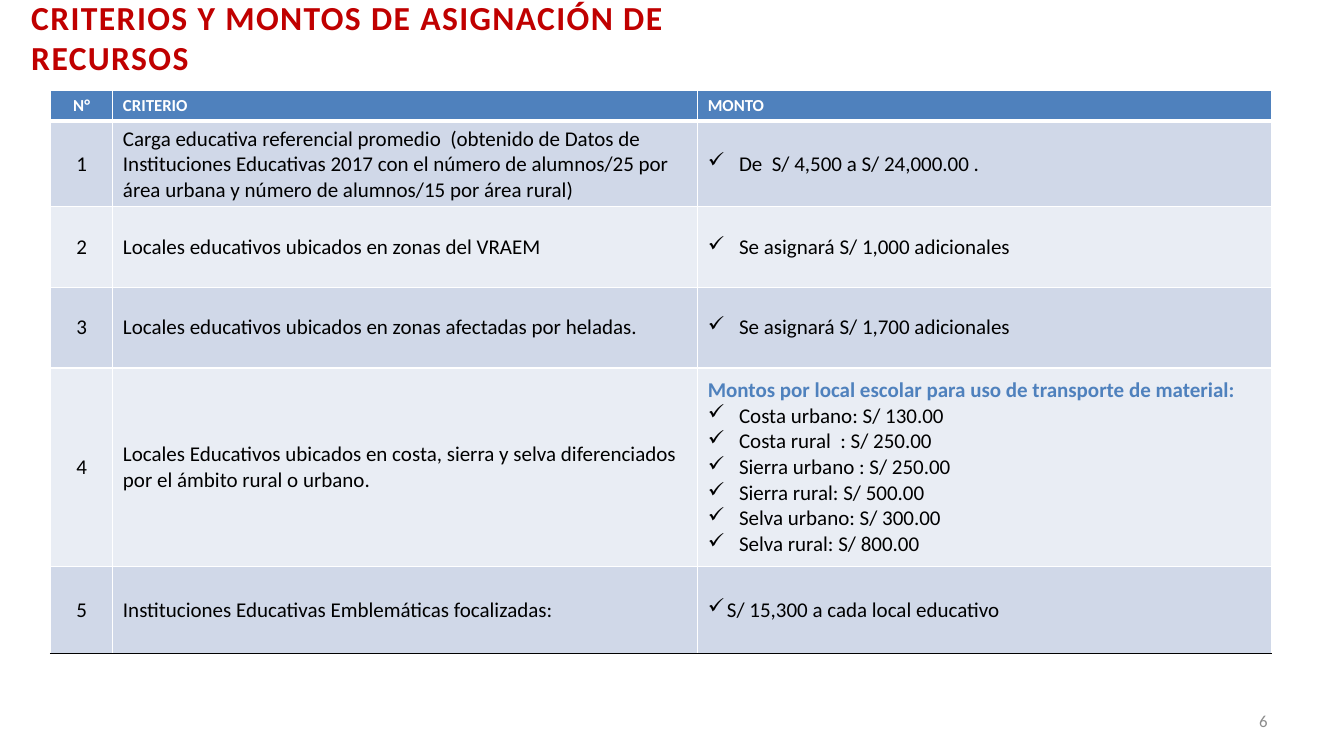
import pptx
import pptx.util
import pptx.dml.color
import pptx.enum.text
import pptx.oxml
import pptx.oxml.ns

Inches, Pt = pptx.util.Inches, pptx.util.Pt
ALIGN = pptx.enum.text.PP_ALIGN
MIDDLE = pptx.enum.text.MSO_ANCHOR.MIDDLE
COLORS = {"title": "C00000", "header": "4F81BD", "odd": "D0D8E8", "even": "E9EDF4",
          "text": "000000", "white": "FFFFFF", "number": "8C8C8C"}
NAMESPACE = pptx.oxml.ns.nsdecls("a")

HEADINGS = ["N°", "CRITERIO", "MONTO"]
CRITERIA = [
    ("Carga educativa referencial promedio  (obtenido de Datos de Instituciones Educativas 2017 "
     "con el número de alumnos/25 por área urbana y número de alumnos/15 por área rural)",
     ["De  S/ 4,500 a S/ 24,000.00 ."]),
    ("Locales educativos ubicados en zonas del VRAEM", ["Se asignará S/ 1,000 adicionales"]),
    ("Locales educativos ubicados en zonas afectadas por heladas.",
     ["Se asignará S/ 1,700 adicionales"]),
    ("Locales Educativos ubicados en costa, sierra y selva diferenciados por el ámbito rural "
     "o urbano.",
     ["Montos por local escolar para uso de transporte de material:",
      "Costa urbano: S/ 130.00", "Costa rural  : S/ 250.00", "Sierra urbano : S/ 250.00",
      "Sierra rural: S/ 500.00", "Selva urbano: S/ 300.00", "Selva rural: S/ 800.00"]),
    ("Instituciones Educativas Emblemáticas focalizadas:", ["S/ 15,300 a cada local educativo"]),
]
COLUMN_WIDTHS = [0.62, 5.8, 5.69]
ROW_HEIGHTS = [0.28, 0.8, 0.8, 0.8, 1.97, 0.86]


def rgb(name):
    return pptx.dml.color.RGBColor.from_string(COLORS[name])


def write(paragraph, text, color, align=ALIGN.LEFT, **font_format):
    run = paragraph.add_run()
    run.text = text
    paragraph.alignment = align
    for attribute, value in {"name": "Calibri", "bold": False, **font_format}.items():
        setattr(run.font, attribute, value)
    run.font.color.rgb = rgb(color)
    return run


def add_check(paragraph, indent):
    properties = paragraph._p.get_or_add_pPr()
    properties.set("marL", str(Inches(indent)))
    properties.set("indent", str(-Inches(indent)))
    properties.append(pptx.oxml.parse_xml(f'<a:buChar {NAMESPACE} char="✓"/>'))


def format_cell(cell, fill, bottom=("white", 1)):
    properties = cell._tc.get_or_add_tcPr()
    borders = {side: ("white", 1) for side in "LRT"} | {"B": bottom}
    for side, (color, width) in borders.items():
        properties.append(pptx.oxml.parse_xml(
            f'<a:ln{side} {NAMESPACE} w="{Pt(width)}"><a:solidFill>'
            f'<a:srgbClr val="{COLORS[color]}"/></a:solidFill></a:ln{side}>'))
    cell.fill.solid()
    cell.fill.fore_color.rgb = rgb(fill)


def fill_amounts(text_frame, amounts, indent):
    for index, amount in enumerate(amounts):
        paragraph = text_frame.add_paragraph() if index else text_frame.paragraphs[0]
        if amount.endswith(":"):
            write(paragraph, amount, "header", size=Pt(15), bold=True)
        else:
            add_check(paragraph, indent)
            write(paragraph, amount, "text", size=Pt(15))


def add_title(slide, left, top, width, height):
    title = slide.shapes.title
    title.left, title.top, title.width, title.height = map(Inches, (left, top, width, height))
    title.text_frame.word_wrap = True
    title.text_frame.auto_size = pptx.enum.text.MSO_AUTO_SIZE.NONE
    title.text_frame.vertical_anchor = MIDDLE
    run = write(title.text_frame.paragraphs[0], "CRITERIOS Y MONTOS DE ASIGNACIÓN DE RECURSOS",
                "title", size=Pt(24), bold=True)
    run.font._element.set("spc", "100")


def add_criteria_table(slide, left, top):
    box = map(Inches, (left, top, sum(COLUMN_WIDTHS), sum(ROW_HEIGHTS)))
    table = slide.shapes.add_table(len(ROW_HEIGHTS), len(COLUMN_WIDTHS), *box).table
    for column, width in zip(table.columns, COLUMN_WIDTHS):
        column.width = Inches(width)
    for row, height in zip(table.rows, ROW_HEIGHTS):
        row.height = Inches(height)

    # Header row
    for index, heading in enumerate(HEADINGS):
        cell = table.cell(0, index)
        format_cell(cell, "header", ("white", 3))
        write(cell.text_frame.paragraphs[0], heading, "white",
              ALIGN.LEFT if index else ALIGN.CENTER, size=Pt(12), bold=True)

    # One row per criterion
    for number, (criterion, amounts) in enumerate(CRITERIA, 1):
        last = number == len(CRITERIA)
        cells = [table.cell(number, index) for index in range(len(HEADINGS))]
        for cell in cells:
            format_cell(cell, "odd" if number % 2 else "even", ("text" if last else "white", 1))
            cell.vertical_anchor = MIDDLE
        write(cells[0].text_frame.paragraphs[0], str(number), "text", ALIGN.CENTER, size=Pt(15))
        write(cells[1].text_frame.paragraphs[0], criterion, "text", size=Pt(15))
        fill_amounts(cells[2].text_frame, amounts, 0.19 if last else 0.31)


def add_page_number(slide, left, top, width, height):
    text_frame = slide.shapes.add_textbox(*map(Inches, (left, top, width, height))).text_frame
    text_frame.word_wrap = True
    text_frame.vertical_anchor = MIDDLE
    write(text_frame.paragraphs[0], "6", "number", ALIGN.RIGHT, size=Pt(12))


def main():
    presentation = pptx.Presentation()
    presentation.slide_width, presentation.slide_height = Inches(13.33), Inches(7.5)
    slide = presentation.slides.add_slide(presentation.slide_layouts[5])
    add_page_number(slide, 9.56, 6.95, 3.11, 0.4)
    add_criteria_table(slide, 0.5, 0.9)
    add_title(slide, 0.21, 0.25, 7.67, 0.24)
    presentation.save("out.pptx")


if __name__ == "__main__":
    main()
